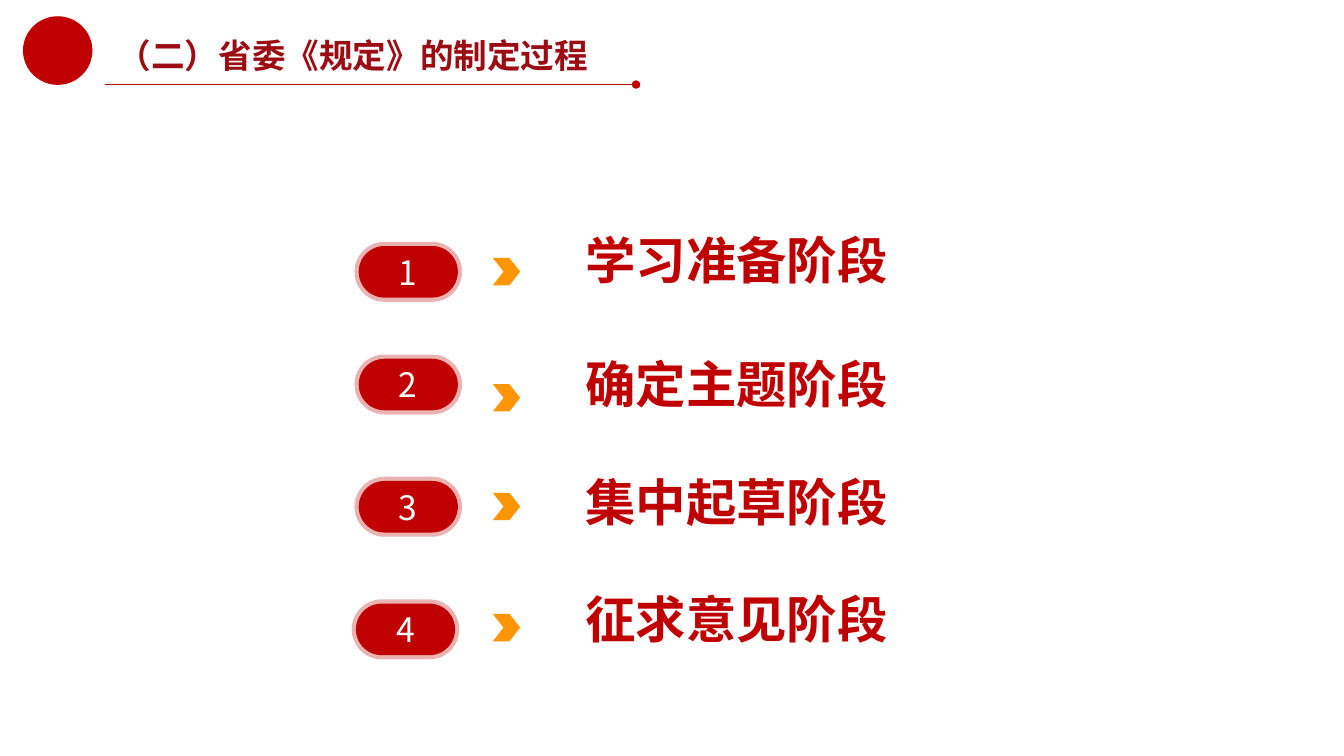
from lxml import etree
from pptx import Presentation
from pptx.dml.color import RGBColor
from pptx.enum.shapes import MSO_CONNECTOR, MSO_SHAPE
from pptx.enum.text import MSO_ANCHOR, PP_ALIGN
from pptx.oxml.ns import qn
from pptx.util import Cm, Pt

STRAIGHT = MSO_CONNECTOR.STRAIGHT
CHEVRON, PILL, OVAL = MSO_SHAPE.CHEVRON, MSO_SHAPE.ROUNDED_RECTANGLE, MSO_SHAPE.OVAL
TOP, MIDDLE = MSO_ANCHOR.TOP, MSO_ANCHOR.MIDDLE
LEFT, CENTER, JUSTIFY = PP_ALIGN.LEFT, PP_ALIGN.CENTER, PP_ALIGN.JUSTIFY

FONT = "Noto Sans CJK SC"
RED, DARK_RED, ORANGE, WHITE = "C00000", "9B0D13", "FF9500", "FFFFFF"

HEADING = {"size": Pt(24), "bold": True}
STAGE = {"size": Pt(36), "bold": True}
NUMBER = {"size": Pt(24), "bold": False}

# Stage name, pill left, then the tops of pill, chevron and name, in cm
STAGES = [
    ("学习准备阶段", 9.04, 6.2, 6.5, 6.32),
    ("确定主题阶段", 9.04, 9.04, 9.68, 9.45),
    ("集中起草阶段", 9.04, 12.12, 12.42, 12.42),
    ("征求意见阶段", 8.97, 15.21, 15.47, 15.37),
]


def rgb(value):
    return RGBColor.from_string(value)


def write(frame, text, style, color, align, anchor=TOP, spacing=None):
    frame.word_wrap = True
    frame.vertical_anchor = anchor
    paragraph = frame.paragraphs[0]
    paragraph.alignment = align
    paragraph.line_spacing = spacing
    run = paragraph.add_run()
    run.text = text
    for attribute, value in {**style, "name": FONT}.items():
        setattr(run.font, attribute, value)
    run.font.color.rgb = rgb(color)
    etree.SubElement(run.font._element, qn("a:ea"), typeface=FONT)


def add_label(slide, box, *text_format):
    label = slide.shapes.add_textbox(*map(Cm, box))
    write(label.text_frame, *text_format)


def add_filled(slide, kind, box, color, corner=None):
    filled = slide.shapes.add_shape(kind, *map(Cm, box))
    filled.shadow.inherit = False
    filled.fill.solid()
    filled.fill.fore_color.rgb = rgb(color)
    filled.line.fill.background()
    if corner is not None:
        filled.adjustments[0] = corner
    return filled


def add_number_pill(slide, number, left, top):
    """Add a numbered pill with a wide translucent rim."""
    pill = add_filled(slide, PILL, (left, top, 2.5, 1.3), RED, 0.5)
    pill.line.width = Pt(6)
    pill.line.color.rgb = rgb(RED)
    rim_color = pill.line._ln.find(".//" + qn("a:srgbClr"))
    etree.SubElement(rim_color, qn("a:alpha"), val="30000")
    write(pill.text_frame, str(number), NUMBER, WHITE, CENTER, MIDDLE)


def add_heading_rule(slide, left, right, y):
    """Add the heading underline, ending in a dot."""
    rule = slide.shapes.add_connector(STRAIGHT, Cm(left), Cm(y), Cm(right), Cm(y))
    rule.line.width = Pt(0.75)
    rule.line.color.rgb = rgb(RED)
    etree.SubElement(rule.line._ln, qn("a:tailEnd"), type="oval")
    etree.SubElement(rule._element.spPr, qn("a:effectLst"))


def main():
    deck = Presentation()
    deck.slide_width, deck.slide_height = Cm(33.87), Cm(19.05)
    slide = deck.slides.add_slide(deck.slide_layouts[6])

    add_heading_rule(slide, 2.64, 16.03, 2.13)
    add_filled(slide, OVAL, (0.58, 0.41, 1.75, 1.73), RED)
    add_label(slide, (2.72, 0.86, 13, 1.52), "（二）省委《规定》的制定过程",
              HEADING, DARK_RED, LEFT, TOP, 0.9)

    for number, stage in enumerate(STAGES, 1):
        name, pill_left, pill_top, chevron_top, name_top = stage
        add_number_pill(slide, number, pill_left, pill_top)
        add_filled(slide, CHEVRON, (12.42, chevron_top, 0.69, 0.69), ORANGE, 0.393)
        add_label(slide, (14.5, name_top, 9.6, 1.12), name,
                  STAGE, RED, JUSTIFY, TOP, Pt(24))

    deck.save("out.pptx")


if __name__ == "__main__":
    main()
